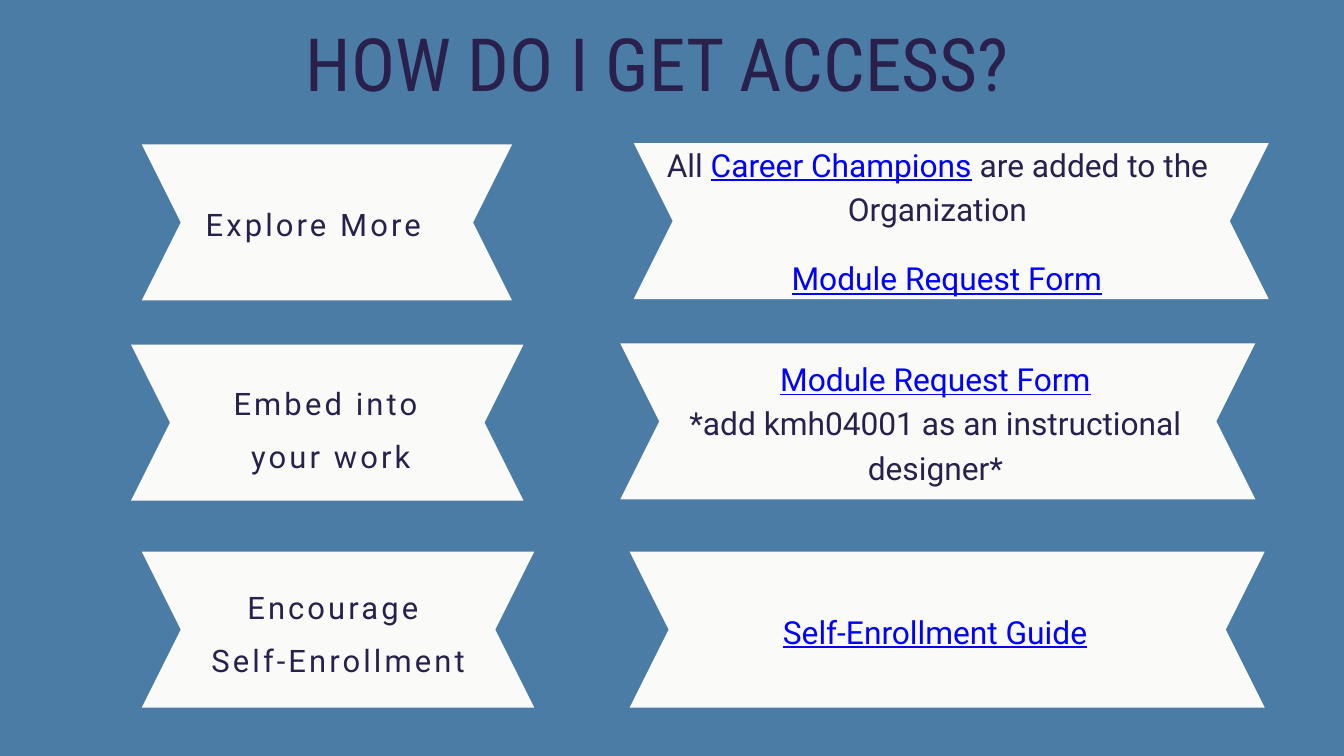
from pptx import Presentation
from pptx.dml.color import RGBColor
from pptx.enum import text
from pptx.util import Inches, Pt

NAVY, LINK, PAPER, BLUE = "29214C", "0000FF", "FAFAF9", "4B7CA6"
RIBBON_HEIGHT, NOTCH = 2.32, 0.58


def color(hex_string):
    return RGBColor.from_string(hex_string)


def write(shape, box, paragraphs, size, leading, font="Roboto", tracking=0,
          align=text.PP_ALIGN.CENTER):
    """Place a text shape and fill it; each paragraph is a list of (words, colour)."""
    shape.left, shape.top, shape.width, shape.height = map(Inches, box)
    frame = shape.text_frame
    frame.word_wrap = True
    frame.vertical_anchor = text.MSO_ANCHOR.TOP
    frame.auto_size = text.MSO_AUTO_SIZE.SHAPE_TO_FIT_TEXT
    frame.margin_left = frame.margin_right = frame.margin_top = frame.margin_bottom = 0
    for i, parts in enumerate(paragraphs):
        paragraph = frame.add_paragraph() if i else frame.paragraphs[0]
        paragraph.alignment = align
        paragraph.line_spacing = Pt(leading)
        for words, ink in parts:
            run = paragraph.add_run()
            run.text = words
            run.font.name = font
            run.font.size = Pt(size)
            run.font.color.rgb = color(ink)
            run.font.underline = ink == LINK
            if tracking:
                run.font._element.set("spc", str(round(tracking * 100)))


prs = Presentation()
prs.slide_width, prs.slide_height = Inches(20), Inches(11.25)
slide = prs.slides.add_slide(prs.slide_layouts[5])
slide.background.fill.solid()
slide.background.fill.fore_color.rgb = color(BLUE)

write(slide.shapes.title, (1.61, 0.27, 16.35, 1.32),
      [[("HOW DO I GET ACCESS?", NAVY)]], 78.7, 94.5, font="Roboto Condensed")

# Ribbons with notched ends: left, top, width
ribbons = [
    (2.11, 2.15, 5.51), (9.43, 2.13, 9.45),
    (1.95, 5.13, 5.84), (9.23, 5.11, 9.45),
    (2.11, 8.21, 5.84), (9.37, 8.21, 9.45),
]
for left, top, width in ribbons:
    right, middle, bottom = left + width, top + RIBBON_HEIGHT / 2, top + RIBBON_HEIGHT
    outline = slide.shapes.build_freeform(Inches(right), Inches(top))
    outline.add_line_segments([
        (Inches(x), Inches(y)) for x, y in [
            (left, top), (left + NOTCH, middle), (left, bottom),
            (right, bottom), (right - NOTCH, middle)]
    ], close=True)
    ribbon = outline.convert_to_shape()
    ribbon.shadow.inherit = False
    ribbon.fill.solid()
    ribbon.fill.fore_color.rgb = color(PAPER)
    ribbon.line.fill.background()

# Goals in the left column
goals = [
    ((3.06, 2.83, 4.89, 0.73), ["Explore More"], text.PP_ALIGN.LEFT),
    ((2.06, 5.49, 5.73, 1.51), ["Embed into ", "your work"], text.PP_ALIGN.CENTER),
    ((2.17, 8.53, 5.73, 1.51), ["Encourage ", "Self-Enrollment"], text.PP_ALIGN.CENTER),
]
for box, lines, align in goals:
    write(slide.shapes.add_textbox(0, 0, 0, 0), box, [[(line, NAVY)] for line in lines],
          33.2, 56.5, tracking=3.32, align=align)

# Ways to get there in the right column
request_form = [("Module Request Form", LINK)]
steps = [
    ((9.64, 2.07, 8.62, 1.29), [[("All ", NAVY), ("Career Champions", LINK),
                                 (" are added to the Organization", NAVY)]]),
    ((9.78, 3.76, 8.62, 0.63), [request_form]),
    ((9.43, 5.26, 8.98, 2.6), [request_form,
                               [("*add kmh04001 as an instructional designer*", NAVY)]]),
    ((9.19, 9.02, 9.45, 0.63), [[("Self-Enrollment Guide", LINK)]]),
]
for box, paragraphs in steps:
    write(slide.shapes.add_textbox(0, 0, 0, 0), box, paragraphs, 34, 47.6)

prs.save("out.pptx")
